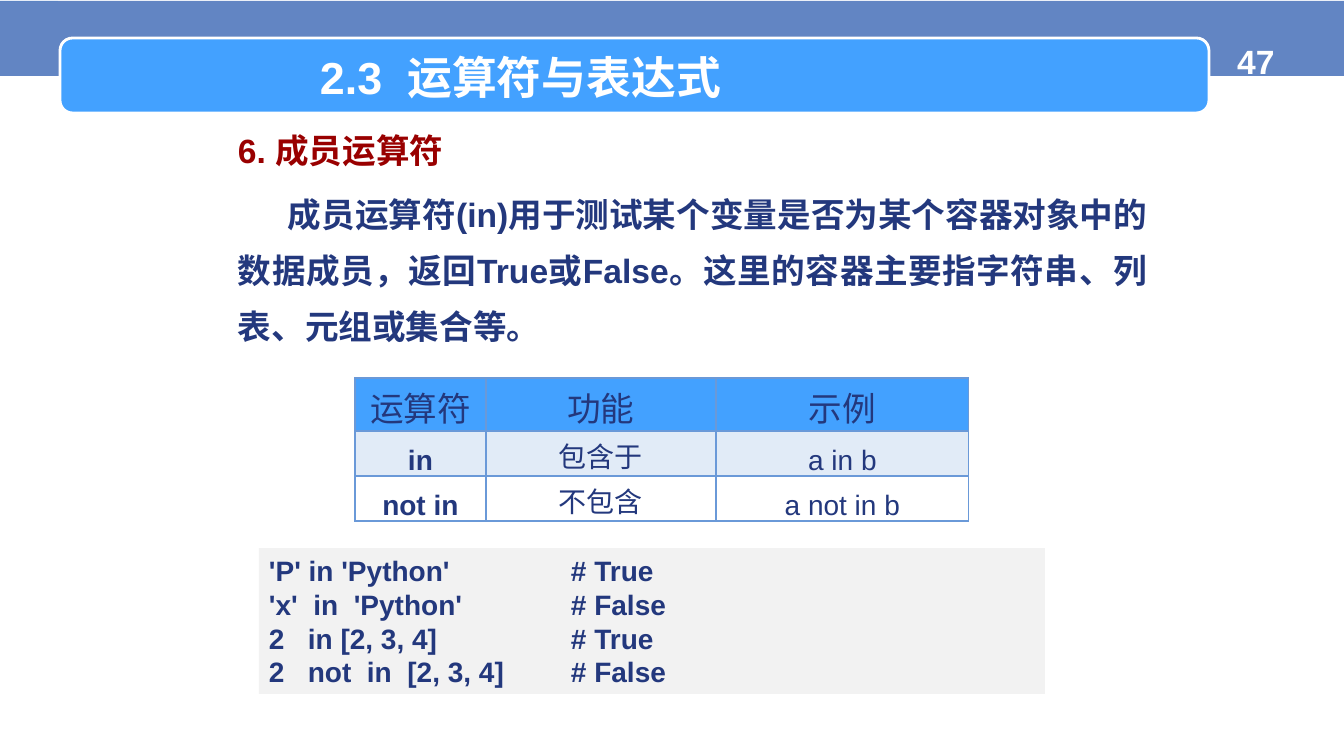
from lxml import etree
from pptx import Presentation
from pptx.dml.color import RGBColor
from pptx.enum.dml import MSO_PATTERN
from pptx.enum.shapes import MSO_SHAPE
from pptx.enum.text import MSO_ANCHOR, PP_ALIGN
from pptx.oxml.ns import qn
from pptx.util import Pt

EMU_PER_PX = 914400 / 100.8
FONT = "Arial"
WHITE = RGBColor(0xFF, 0xFF, 0xFF)
PALE_CYAN = RGBColor(0xCC, 0xEC, 0xFF)
BAND_BLUE = RGBColor(0x49, 0x72, 0xBA)
BRIGHT_BLUE = RGBColor(0x43, 0xA1, 0xFF)
BORDER_BLUE = RGBColor(0x6A, 0x99, 0xD8)
ROW_BLUE = RGBColor(0xE1, 0xEB, 0xF7)
NAVY = RGBColor(0x23, 0x38, 0x7D)
DARK_RED = RGBColor(0x99, 0x00, 0x00)
CODE_GREY = RGBColor(0xF2, 0xF2, 0xF2)

RECTANGLE = MSO_SHAPE.RECTANGLE
ROUNDED = MSO_SHAPE.ROUNDED_RECTANGLE
DARK_HORIZONTAL = MSO_PATTERN.DARK_HORIZONTAL
TOP, MIDDLE, BOTTOM = MSO_ANCHOR.TOP, MSO_ANCHOR.MIDDLE, MSO_ANCHOR.BOTTOM
LEFT, CENTER, JUSTIFY = PP_ALIGN.LEFT, PP_ALIGN.CENTER, PP_ALIGN.JUSTIFY

OPERATORS = [
    ("运算符", "功能", "示例"),
    ("in", "包含于", "a in b"),
    ("not in", "不包含", "a not in b"),
]
COLUMN_WIDTHS = [131, 230, 253]
ROW_HEIGHTS = [53, 45, 45]
CODE_LINES = [
    ("'P' in 'Python'", "# True"),
    ("'x'  in  'Python'", "# False"),
    ("2   in [2, 3, 4]", "# True"),
    ("2   not  in  [2, 3, 4]", "# False"),
]


def px(length):
    return round(length * EMU_PER_PX)


def add_block(page, kind, left, top, width, height, color):
    block = page.shapes.add_shape(kind, px(left), px(top), px(width), px(height))
    block.shadow.inherit = False
    block.fill.solid()
    block.fill.fore_color.rgb = color
    block.line.fill.background()
    return block


def set_frame(frame, anchor, side=10, edge=5):
    frame.word_wrap = True
    frame.vertical_anchor = anchor
    frame.margin_left = frame.margin_right = px(side)
    frame.margin_top = frame.margin_bottom = px(edge)


def add_text_box(page, left, top, width, height, anchor=TOP):
    box = page.shapes.add_textbox(px(left), px(top), px(width), px(height))
    set_frame(box.text_frame, anchor)
    return box.text_frame


def write(para, text, size, color, bold=True, align=LEFT, spacing=None, before=0):
    para.alignment = align
    para.space_before = Pt(before)
    if spacing:
        para.line_spacing = spacing
    span = para.add_run()
    span.text = text
    span.font.name = FONT
    span.font.size = Pt(size)
    span.font.bold = bold
    span.font.color.rgb = color


def set_borders(cell, bottom_width):
    properties = cell._tc.get_or_add_tcPr()
    for side in ("lnL", "lnR", "lnT", "lnB"):
        width = bottom_width if side == "lnB" else 1
        line = etree.SubElement(properties, qn("a:" + side), w=str(Pt(width)))
        fill = etree.SubElement(line, qn("a:solidFill"))
        etree.SubElement(fill, qn("a:srgbClr"), val=str(BORDER_BLUE))


def add_background(page):
    strip = add_block(page, RECTANGLE, 0, 1, 58, 756, WHITE)
    strip.fill.patterned()
    strip.fill.pattern = DARK_HORIZONTAL
    strip.fill.fore_color.rgb = WHITE
    strip.fill.back_color.rgb = PALE_CYAN

    band = add_block(page, RECTANGLE, 0, 1, 1344, 75, BAND_BLUE)
    color = band.fill._xPr.find(qn("a:solidFill"))[0]
    etree.SubElement(color, qn("a:alpha"), val="86000")

    banner = add_block(page, ROUNDED, 60, 38, 1149, 75, BRIGHT_BLUE)
    banner.line.color.rgb = WHITE
    banner.line.width = Pt(2)


def add_body(page):
    frame = add_text_box(page, 228, 109, 929, 242)
    write(frame.paragraphs[0], "6. 成员运算符", 24, DARK_RED, spacing=1.4, before=5)
    para = frame.add_paragraph()
    write(
        para,
        "成员运算符(in)用于测试某个变量是否为某个容器对象中的数据成员，"
        "返回True或False。这里的容器主要指字符串、列表、元组或集合等。",
        24, NAVY, align=JUSTIFY, spacing=1.4, before=5,
    )
    para._p.get_or_add_pPr().set("indent", str(px(50)))


def add_operator_table(page):
    table = page.shapes.add_table(
        len(ROW_HEIGHTS), len(COLUMN_WIDTHS), px(355), px(378),
        px(sum(COLUMN_WIDTHS)), px(sum(ROW_HEIGHTS)),
    ).table
    table.first_row = table.horz_banding = False
    for column, width in zip(table.columns, COLUMN_WIDTHS):
        column.width = px(width)
    for row, height in zip(table.rows, ROW_HEIGHTS):
        row.height = px(height)
    for r, texts in enumerate(OPERATORS):
        for c, text in enumerate(texts):
            cell = table.cell(r, c)
            set_borders(cell, 2 if r == 0 else 1)
            if r < 2:
                cell.fill.solid()
                cell.fill.fore_color.rgb = (BRIGHT_BLUE, ROW_BLUE)[r]
            else:
                cell.fill.background()
            cell.vertical_anchor = BOTTOM
            cell.margin_left = cell.margin_right = px(7)
            cell.margin_top = cell.margin_bottom = 0
            write(cell.text_frame.paragraphs[0], text, 24 if r == 0 else 20, NAVY,
                  bold=r > 0 and c == 0, align=CENTER, spacing=Pt(14))


def add_code(page):
    frame = add_block(page, RECTANGLE, 259, 548, 786, 146, CODE_GREY).text_frame
    set_frame(frame, MIDDLE)
    for i, (code, result) in enumerate(CODE_LINES):
        para = frame.add_paragraph() if i else frame.paragraphs[0]
        write(para, f"{code}\t{result}", 20, NAVY, spacing=Pt(24))
        stops = etree.SubElement(para._p.get_or_add_pPr(), qn("a:tabLst"))
        etree.SubElement(stops, qn("a:tab"), pos=str(px(302)), algn="l")


def main():
    deck = Presentation()
    deck.slide_width, deck.slide_height = px(1344), px(756)
    page = deck.slides.add_slide(deck.slide_layouts[6])
    add_background(page)
    number = add_text_box(page, 1195, 36, 122, 72)
    write(number.paragraphs[0], "47", 24, WHITE, align=CENTER)
    title = add_text_box(page, 310, 44, 723, 65, MIDDLE)
    write(title.paragraphs[0], "2.3  运算符与表达式", 32, WHITE)
    add_body(page)
    add_operator_table(page)
    add_code(page)
    deck.save("out.pptx")


if __name__ == "__main__":
    main()
